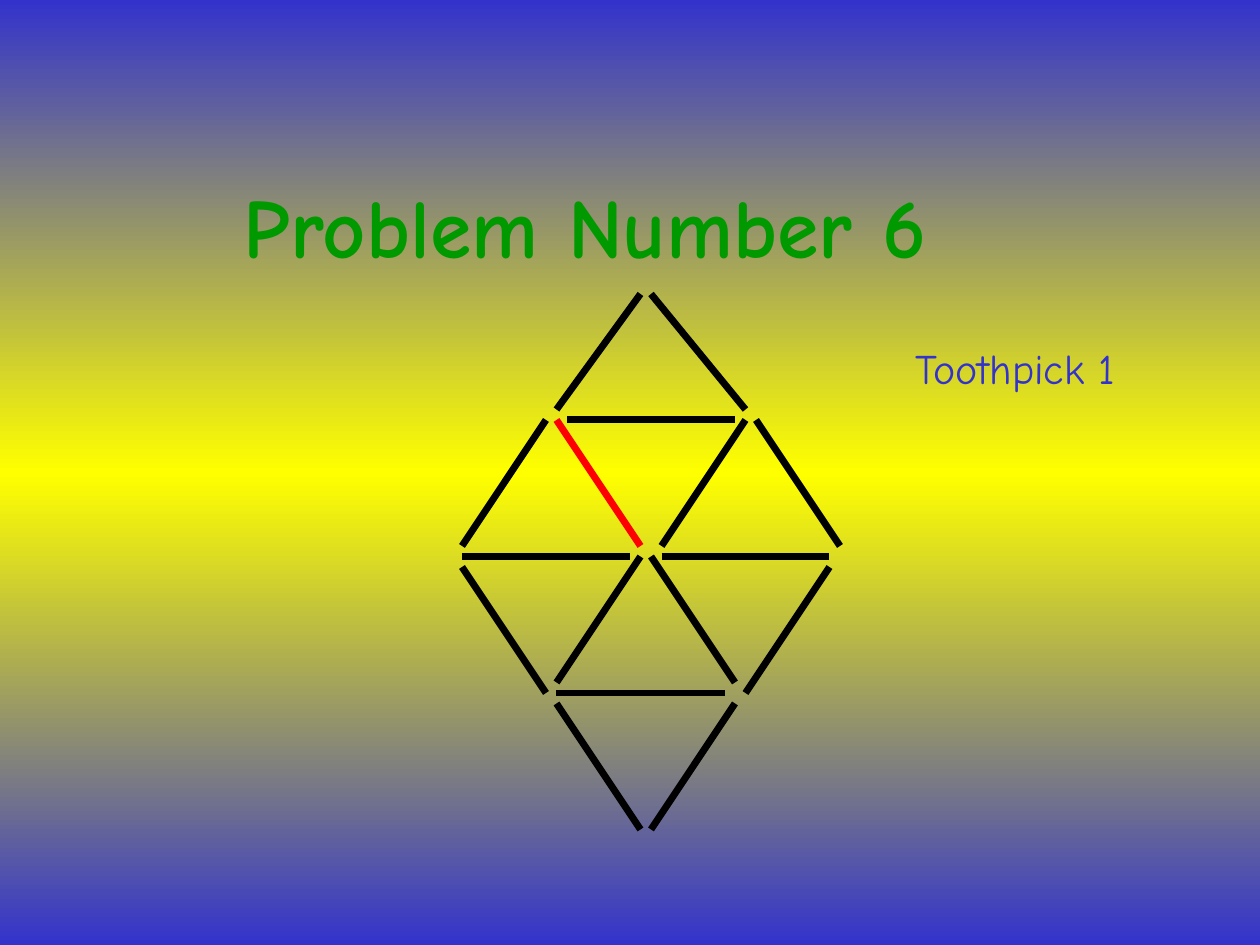
from copy import deepcopy

from lxml.etree import SubElement
from pptx import Presentation
from pptx.dml.color import RGBColor
from pptx.enum.shapes import MSO_CONNECTOR
from pptx.enum.text import MSO_ANCHOR, MSO_AUTO_SIZE, PP_ALIGN
from pptx.oxml.ns import qn
from pptx.util import Emu, Pt

PX = 9525
COLORS = {
    "edge": "3333CC",
    "middle": "FFFF00",
    "heading": "009900",
    "toothpick": "000000",
    "marked": "FF0000",
}


class Puzzle:
    font = "Comic Neue"
    stroke = Pt(4)

    def __init__(self, slide):
        self.slide = slide

    def color(self, name):
        return RGBColor.from_string(COLORS[name])

    def background(self, names):
        fill = self.slide.background.fill
        fill.gradient()
        fill.gradient_angle = 270
        stops = self.slide.element.find(".//" + qn("a:gsLst"))
        stops.append(deepcopy(stops[-1]))
        for index, (stop, name) in enumerate(zip(fill.gradient_stops, names)):
            stop.position = index / (len(names) - 1)
            stop.color.rgb = self.color(name)

    def set_text(self, holder, text, size, color, bold, wrap):
        frame = holder.text_frame
        frame.text = text
        frame.word_wrap = wrap
        frame.auto_size = MSO_AUTO_SIZE.NONE
        frame.vertical_anchor = MSO_ANCHOR.TOP
        paragraph = frame.paragraphs[0]
        paragraph.alignment = PP_ALIGN.LEFT
        paragraph.font.name = self.font
        paragraph.font.size = Pt(size)
        paragraph.font.bold = bold
        paragraph.font.color.rgb = self.color(color)

    def title(self, text, left, top, width, height):
        heading = self.slide.shapes.title
        heading.left, heading.top = Emu(left * PX), Emu(top * PX)
        heading.width, heading.height = Emu(width * PX), Emu(height * PX)
        self.set_text(heading, text, 48, "heading", True, True)

    def label(self, text, left, top, width, height):
        caption = self.slide.shapes.add_textbox(
            *(Emu(n * PX) for n in (left, top, width, height)))
        self.set_text(caption, text, 24, "edge", False, False)

    def toothpick(self, x, y, dx, dy, color="toothpick"):
        pick = self.slide.shapes.add_connector(
            MSO_CONNECTOR.STRAIGHT,
            *(Emu(n * PX) for n in (x, y, x + dx, y + dy)))
        pick.line.width = self.stroke
        pick.line.color.rgb = self.color(color)
        SubElement(pick.element.spPr, qn("a:effectLst"))


def main():
    deck = Presentation()
    deck.slide_width, deck.slide_height = Emu(960 * PX), Emu(720 * PX)
    puzzle = Puzzle(deck.slides.add_slide(deck.slide_layouts[5]))
    puzzle.background(["edge", "middle", "edge"])
    puzzle.title("Problem Number 6", 176, 128, 672, 163)

    directions = {
        (64, -96): [(352, 416), (424, 520), (504, 416), (496, 632), (568, 528)],
        (64, 96): [(496, 424), (576, 320), (352, 432), (424, 536)],
        (128, 0): [(432, 320), (352, 424), (504, 424), (424, 528)],
        (64, -88): [(424, 312)],
        (72, 88): [(496, 224)],
    }
    for (dx, dy), starts in directions.items():
        for x, y in starts:
            puzzle.toothpick(x, y, dx, dy)
    puzzle.toothpick(424, 320, 64, 96, "marked")

    puzzle.label("Toothpick 1", 688, 256, 192, 48)
    deck.save("out.pptx")


if __name__ == "__main__":
    main()
